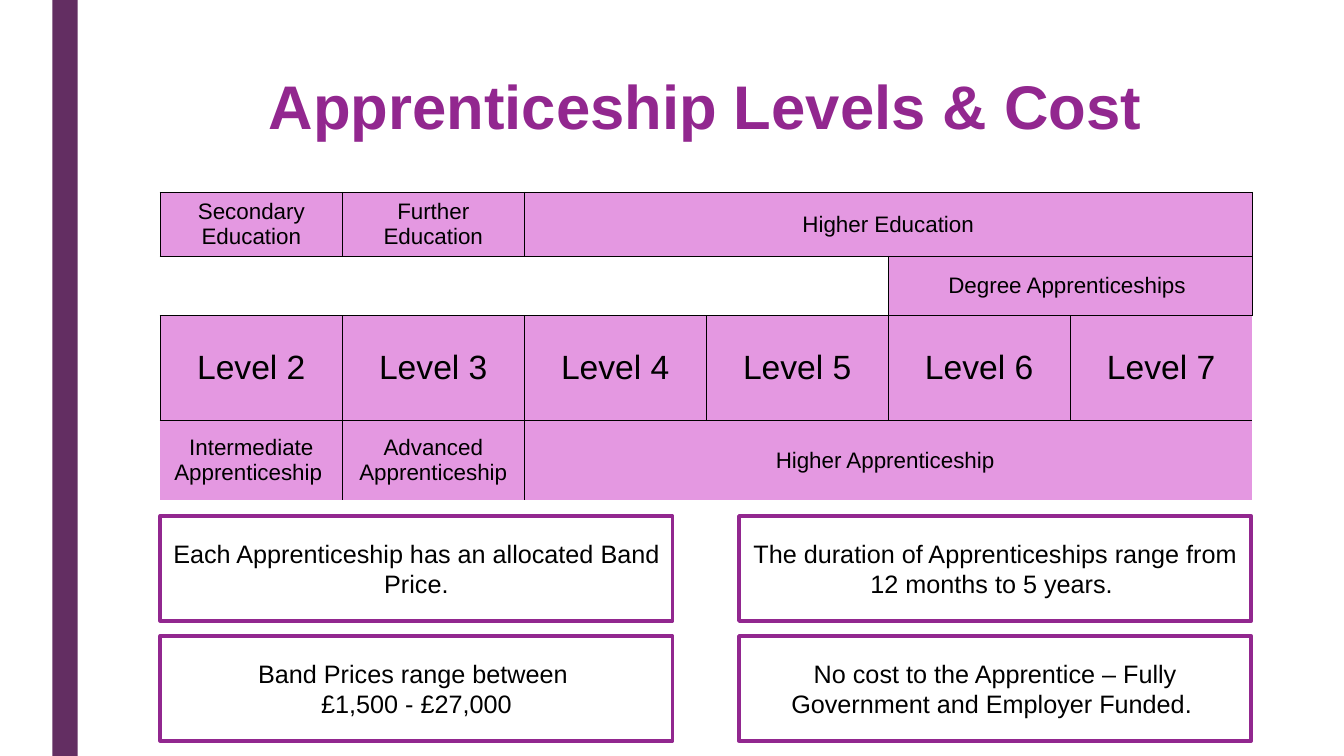
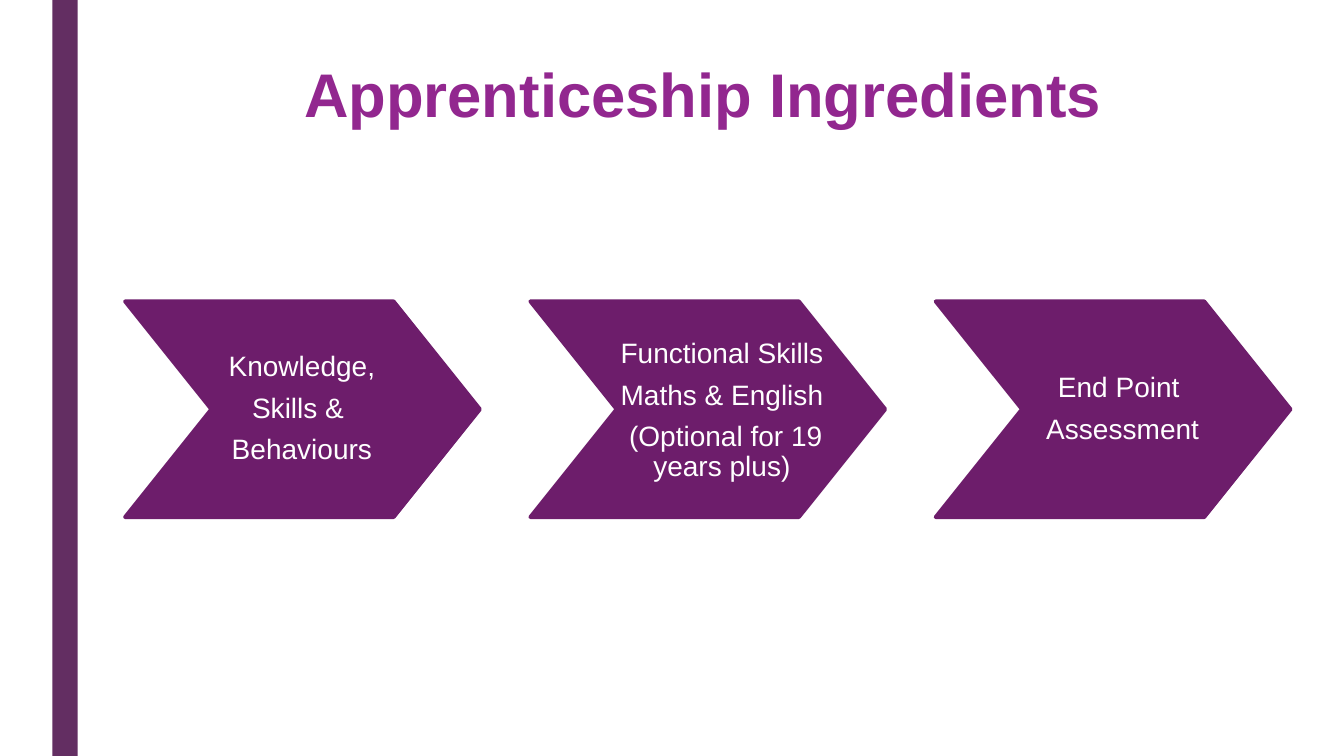
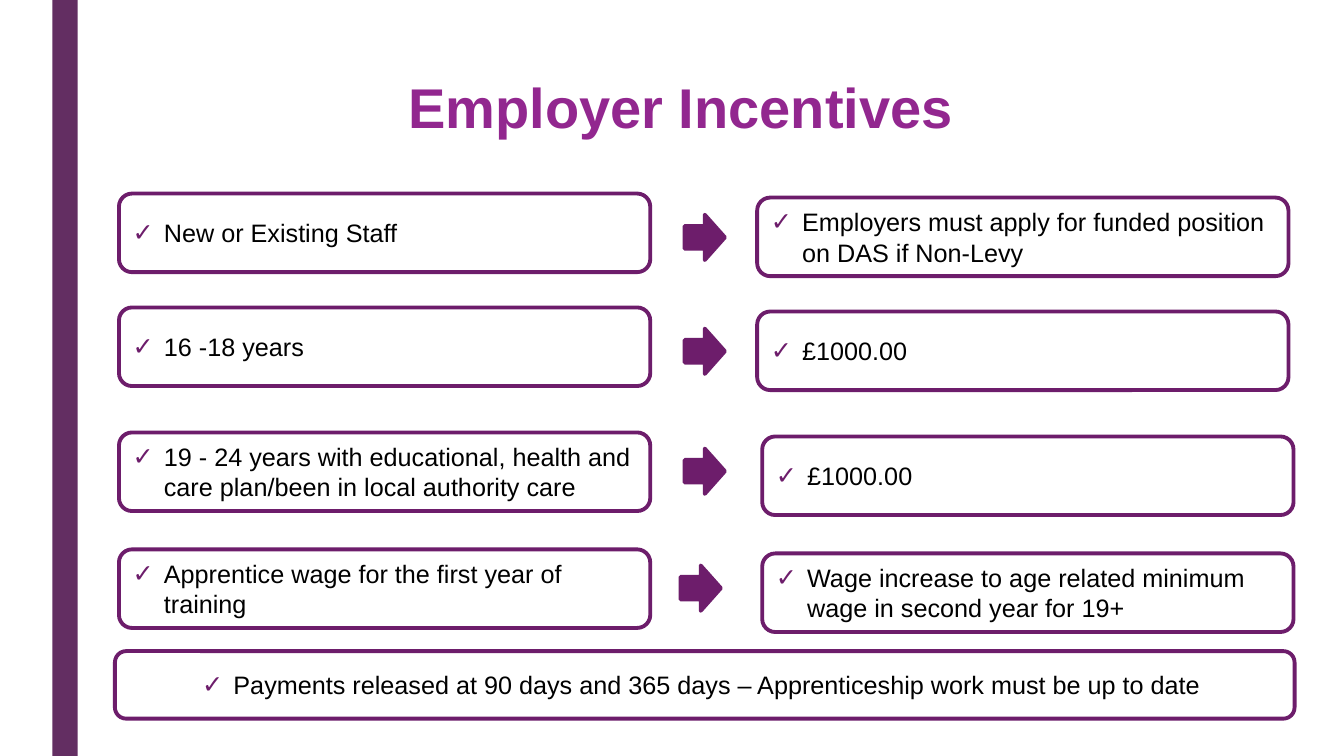
"""Build three slides on apprenticeship levels, ingredients and employer incentives."""

from dataclasses import dataclass
from typing import Optional

from lxml.etree import SubElement
from pptx import Presentation
from pptx.dml.color import RGBColor
from pptx.enum.shapes import MSO_SHAPE
from pptx.enum.text import MSO_ANCHOR, PP_ALIGN
from pptx.oxml.ns import qn
from pptx.util import Inches, Pt


@dataclass(frozen=True)
class Theme:
    font: str = "Arial"
    band: RGBColor = RGBColor(0x63, 0x2E, 0x62)
    title: RGBColor = RGBColor(0x92, 0x27, 0x8F)
    accent: RGBColor = RGBColor(0x6D, 0x1D, 0x6B)
    cell: RGBColor = RGBColor(0xE4, 0x98, 0xE1)
    white: RGBColor = RGBColor(0xFF, 0xFF, 0xFF)
    black: RGBColor = RGBColor(0, 0, 0)
    title_size: int = 44
    small_title_size: int = 40
    level_size: int = 24
    step_size: int = 20
    body_size: int = 18
    table_size: int = 16
    outline: float = 2.75
    cell_border: float = 1


@dataclass(frozen=True)
class Box:
    left: float
    top: float
    width: float
    height: float

    def lengths(self) -> tuple:
        return tuple(Inches(value) for value in (self.left, self.top, self.width, self.height))


@dataclass(frozen=True)
class Cell:
    row: int
    column: int
    text: str
    sides: str
    span: int = 1
    size: int = 16


@dataclass(frozen=True)
class Step:
    lines: tuple
    text_box: Box


@dataclass(frozen=True)
class Incentive:
    top: float
    condition: str
    benefit: str
    benefit_left: float
    arrow_left: float
    arrow_drop: float


THEME = Theme()

LEVEL_CELLS = [
    Cell(0, 0, "Secondary Education", "LRTB"),
    Cell(0, 1, "Further Education", "LRTB"),
    Cell(0, 2, "Higher Education", "LRTB", 4),
    Cell(1, 0, "", "TB"),
    Cell(1, 1, "", "TB"),
    Cell(1, 2, "", "TB"),
    Cell(1, 3, "", "RTB"),
    Cell(1, 4, "Degree Apprenticeships ", "LRTB", 2),
    *(
        Cell(2, column, f"Level {column + 2}", "LRTB" if column < 5 else "LTB", size=THEME.level_size)
        for column in range(6)
    ),
    Cell(3, 0, "Intermediate Apprenticeship ", "RT"),
    Cell(3, 1, "Advanced Apprenticeship", "LRT"),
    Cell(3, 2, "Higher Apprenticeship ", "LT", 4),
]

COST_FACTS = [
    [
        ("Each Apprenticeship has an allocated Band Price.",),
        ("The duration of Apprenticeships range from 12 months to 5 years. ",),
    ],
    [
        ("Band Prices range between ", "£1,500 - £27,000"),
        ("No cost to the Apprentice – Fully Government and Employer Funded. ",),
    ],
]

STEPS = [
    Step(("Knowledge,", "Skills & ", "Behaviours"), Box(1.51, 2.99, 2.97, 2.14)),
    Step(
        ("Functional Skills", "Maths & English", " (Optional for 19 years plus)"),
        Box(5.87, 3.01, 2.58, 2.14),
    ),
    Step(("End Point ", "Assessment"), Box(9.65, 2.99, 2.97, 2.14)),
]

INCENTIVES = [
    Incentive(
        1.92, "New or Existing Staff",
        "Employers must apply for funded position on DAS if Non-Levy", 7.51, 6.79, 0.21,
    ),
    Incentive(3.05, "16 -18 years", "£1000.00", 7.51, 6.79, 0.21),
    Incentive(
        4.29, "19 - 24 years with educational, health and care plan/been in local authority care",
        "£1000.00", 7.56, 6.79, 0.16,
    ),
    Incentive(
        5.45, "Apprentice wage for the first year of training",
        "Wage increase to age related minimum wage in second year for 19+", 7.56, 6.75, 0.16,
    ),
]


def write_lines(frame, lines: tuple, size: int, color: RGBColor, alignment=PP_ALIGN.CENTER,
                bold: bool = False, line_spacing: Optional[float] = None,
                space_after: Optional[int] = None) -> None:
    """Write each line as one paragraph with one run."""
    frame.word_wrap = True
    for index, line in enumerate(lines):
        paragraph = frame.paragraphs[0] if index == 0 else frame.add_paragraph()
        paragraph.alignment = alignment
        if line_spacing is not None:
            paragraph.line_spacing = line_spacing
        if space_after is not None:
            paragraph.space_after = Pt(space_after)
        run = paragraph.add_run()
        run.text = line
        run.font.name = THEME.font
        run.font.size = Pt(size)
        run.font.bold = bold
        run.font.color.rgb = color


def add_panel(slide, kind, box: Box, fill: RGBColor, line: Optional[RGBColor] = None):
    """Add a flat preset shape with an optional outline."""
    shape = slide.shapes.add_shape(kind, *box.lengths())
    shape.shadow.inherit = False
    shape.fill.solid()
    shape.fill.fore_color.rgb = fill
    if line is None:
        shape.line.fill.background()
    else:
        shape.line.color.rgb = line
        shape.line.width = Pt(THEME.outline)
    shape.text_frame.vertical_anchor = MSO_ANCHOR.MIDDLE
    return shape


def add_titled_slide(presentation, title: str, box: Box, top_inset: float, size: int):
    """Add a blank slide with the side band and its title."""
    slide = presentation.slides.add_slide(presentation.slide_layouts[6])
    add_panel(slide, MSO_SHAPE.RECTANGLE, Box(0.52, 0, 0.25, 7.5), THEME.band)
    frame = slide.shapes.add_textbox(*box.lengths()).text_frame
    frame.margin_top = Inches(top_inset)
    write_lines(frame, (title,), size, THEME.title, bold=True, line_spacing=0.89)
    return slide


def add_borders(cell, sides: str) -> None:
    """Draw the named sides of a table cell."""
    properties = cell._tc.get_or_add_tcPr()
    for side in "LRTB":
        line = SubElement(properties, qn(f"a:ln{side}"))
        if side in sides:
            line.set("w", str(Pt(THEME.cell_border)))
            solid = SubElement(line, qn("a:solidFill"))
            SubElement(solid, qn("a:srgbClr")).set("val", str(THEME.black))
        else:
            SubElement(line, qn("a:noFill"))


def add_level_table(slide) -> None:
    """Add the table of education and apprenticeship levels."""
    box = Box(1.59, 1.91, 10.83, 3.01)
    heights = (0.59, 0.59, 1.04, 0.79)
    table = slide.shapes.add_table(len(heights), 6, *box.lengths()).table
    table.first_row = False
    table.horz_banding = False
    style = table._tbl.tblPr.find(qn("a:tableStyleId"))
    style.text = "{2D5ABB26-0587-4C30-8999-92F81FD0307C}"
    for row, height in zip(table.rows, heights):
        row.height = Inches(height)
    for entry in LEVEL_CELLS:
        last = entry.column + entry.span - 1
        cell = table.cell(entry.row, entry.column)
        if entry.span > 1:
            cell.merge(table.cell(entry.row, last))
        add_borders(cell, entry.sides)
        for column in range(entry.column + 1, last + 1):
            hidden = "L" if column == last else "LR"
            add_borders(table.cell(entry.row, column), "".join(s for s in entry.sides if s not in hidden))
        if not entry.text:
            cell.fill.background()
            continue
        cell.fill.solid()
        cell.fill.fore_color.rgb = THEME.cell
        cell.vertical_anchor = MSO_ANCHOR.MIDDLE
        write_lines(cell.text_frame, (entry.text,), entry.size, THEME.black)


def add_check_box(slide, box: Box, text: str, alignment=PP_ALIGN.LEFT) -> None:
    """Add a rounded box holding one ticked line."""
    shape = add_panel(slide, MSO_SHAPE.FLOWCHART_ALTERNATE_PROCESS, box, THEME.white, THEME.accent)
    properties = shape.text_frame.paragraphs[0]._p.get_or_add_pPr()
    properties.set("marL", str(Inches(0.31)))
    properties.set("indent", str(Inches(-0.31)))
    color = SubElement(properties, qn("a:buClr"))
    SubElement(color, qn("a:srgbClr")).set("val", str(THEME.accent))
    SubElement(properties, qn("a:buFont")).set("typeface", THEME.font)
    SubElement(properties, qn("a:buChar")).set("char", "✓")
    write_lines(shape.text_frame, (text,), THEME.body_size, THEME.black, alignment)


def build_levels(presentation) -> None:
    """Build the slide on levels and cost."""
    slide = add_titled_slide(presentation, "Apprenticeship Levels & Cost",
                             Box(2.47, 0.28, 9.06, 1.51), 0.48, THEME.title_size)
    add_level_table(slide)
    for row, facts in enumerate(COST_FACTS):
        for column, lines in enumerate(facts):
            box = Box(1.59 + 5.74 * column, 5.12 + 1.19 * row, 5.08, 1.04)
            shape = add_panel(slide, MSO_SHAPE.RECTANGLE, box, THEME.white, THEME.title)
            write_lines(shape.text_frame, lines, THEME.body_size, THEME.black)


def build_ingredients(presentation) -> None:
    """Build the slide with the three chevrons."""
    slide = add_titled_slide(presentation, "Apprenticeship Ingredients",
                             Box(2.6, 0.59, 8.75, 1.2), 0.05, THEME.title_size)
    for index, step in enumerate(STEPS):
        box = Box(1.24 + 4.02 * index, 2.99, 3.52, 2.14)
        chevron = add_panel(slide, MSO_SHAPE.CHEVRON, box, THEME.accent, THEME.accent)
        chevron.adjustments[0] = 0.4
        frame = slide.shapes.add_textbox(*step.text_box.lengths()).text_frame
        frame.vertical_anchor = MSO_ANCHOR.MIDDLE
        frame.margin_left = frame.margin_right = Inches(0.21)
        frame.margin_top = frame.margin_bottom = Inches(0.21)
        write_lines(frame, step.lines, THEME.step_size, THEME.white, line_spacing=0.9, space_after=8)


def build_incentives(presentation) -> None:
    """Build the slide pairing conditions with benefits."""
    slide = add_titled_slide(presentation, "Employer Incentives",
                             Box(1.5, 0.34, 10.5, 1.28), 0.46, THEME.small_title_size)
    for item in INCENTIVES:
        add_check_box(slide, Box(1.18, item.top, 5.27, 0.78), item.condition)
        arrow = Box(item.arrow_left, item.top + item.arrow_drop, 0.4, 0.45)
        add_panel(slide, MSO_SHAPE.RIGHT_ARROW, arrow, THEME.accent, THEME.accent)
        add_check_box(slide, Box(item.benefit_left, item.top + 0.04, 5.27, 0.78), item.benefit)
    add_check_box(
        slide, Box(1.14, 6.46, 11.7, 0.67),
        "Payments released at 90 days and 365 days – Apprenticeship work must be up to date ",
        PP_ALIGN.CENTER,
    )


def main() -> None:
    """Create and save the presentation."""
    presentation = Presentation()
    presentation.slide_width = Inches(13.33)
    presentation.slide_height = Inches(7.5)
    build_levels(presentation)
    build_ingredients(presentation)
    build_incentives(presentation)
    presentation.save("out.pptx")


if __name__ == "__main__":
    main()
